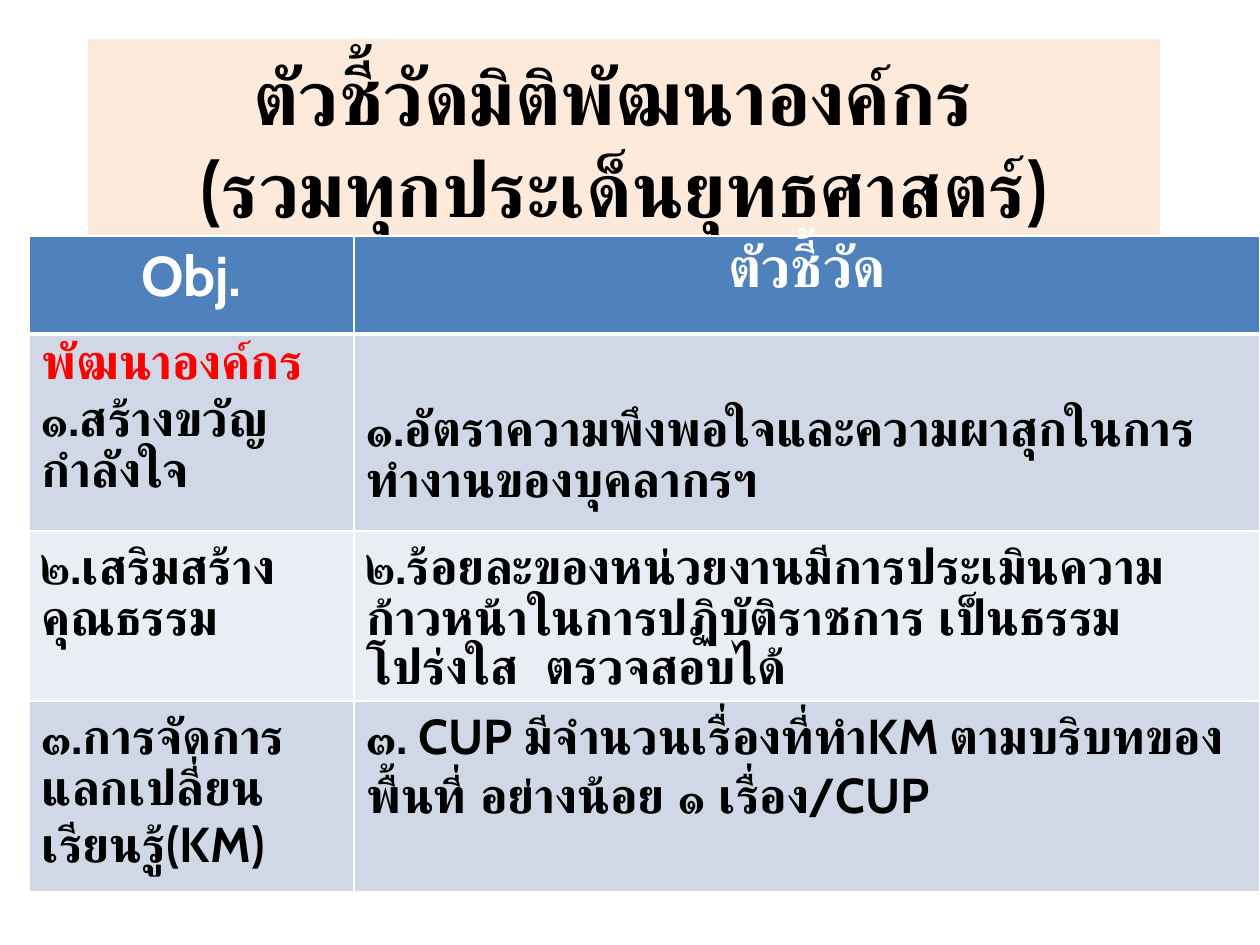
import pptx
import pptx.util
import pptx.dml.color
import pptx.enum.shapes
import pptx.enum.text
import pptx.oxml

THEME = {
    "font": "Cabin",
    "title_size": 44, "head_size": 32, "body_size": 28,
    "peach": "FDEADA", "blue": "4F81BD", "bands": ("D0D8E8", "E9EDF4"),
    "black": "000000", "white": "FFFFFF", "red": "FF0000",
}
EMU_PER_PX = 914400 / 126
CENTER = pptx.enum.text.PP_ALIGN.CENTER


def px(n):
    return pptx.util.Emu(round(n * EMU_PER_PX))


def add_run(p, text, size, color):
    r = p.add_run()
    r.text = text
    r.font.name = THEME["font"]
    r.font.size = pptx.util.Pt(THEME[size])
    r.font.bold = True
    r.font.color.rgb = pptx.dml.color.RGBColor.from_string(THEME[color])


prs = pptx.Presentation()
prs.slide_width, prs.slide_height = px(1260), px(945)
s = prs.slides.add_slide(prs.slide_layouts[6])

# Title band
sp = s.shapes.add_shape(pptx.enum.shapes.MSO_SHAPE.RECTANGLE,
                        px(88), px(39), px(1072), px(203))
sp.shadow.inherit = False
sp.fill.solid()
sp.fill.fore_color.rgb = pptx.dml.color.RGBColor.from_string(THEME["peach"])
sp.line.fill.background()
tf = sp.text_frame
tf.word_wrap = True
tf.vertical_anchor = pptx.enum.text.MSO_ANCHOR.MIDDLE
p = tf.paragraphs[0]
p.alignment = CENTER
add_run(p, "ตัวชี้วัดมิติพัฒนาองค์กร ", "title_size", "black")
p.add_line_break()
add_run(p, "(รวมทุกประเด็นยุทธศาสตร์)", "title_size", "black")

# Objectives and indicators: each cell is a list of (text, colour) paragraphs
rows = [
    ([("Obj.", "white")], [("ตัวชี้วัด", "white")]),
    ([("พัฒนาองค์กร", "red"), ("๑.สร้างขวัญกำลังใจ", "black")],
     [("๑.อัตราความพึงพอใจและความผาสุกในการทำงานของบุคลากรฯ", "black")]),
    ([("๒.เสริมสร้างคุณธรรม", "black")],
     [("๒.ร้อยละของหน่วยงานมีการประเมินความก้าวหน้าในการปฏิบัติราชการ "
       "เป็นธรรม โปร่งใส  ตรวจสอบได้", "black")]),
    ([("๓.การจัดการแลกเปลี่ยนเรียนรู้(KM)", "black")],
     [("๓. CUP มีจำนวนเรื่องที่ทำKM ตามบริบทของพื้นที่ อย่างน้อย ๑ เรื่อง/CUP",
       "black")]),
]
col_widths = [325, 906]
row_heights = [98, 197, 170, 191]
table = s.shapes.add_table(len(rows), len(col_widths), px(29), px(236),
                           px(sum(col_widths)), px(sum(row_heights))).table
for column, width in zip(table.columns, col_widths):
    column.width = px(width)

for i, (row, height) in enumerate(zip(rows, row_heights)):
    table.rows[i].height = px(height)
    header = i == 0
    fill = THEME["blue"] if header else THEME["bands"][(i - 1) % 2]
    for j, paragraphs in enumerate(row):
        cell = table.cell(i, j)
        tf = cell.text_frame
        for k, (text, color) in enumerate(paragraphs):
            p = tf.paragraphs[0] if k == 0 else tf.add_paragraph()
            if header:
                p.alignment = CENTER
            add_run(p, text, "head_size" if header else "body_size", color)
        tcPr = cell._tc.get_or_add_tcPr()
        for side in ("lnL", "lnR", "lnT", "lnB"):
            heavy = (header and side == "lnB") or (i == 1 and side == "lnT")
            width = pptx.util.Pt(3 if heavy else 1)
            tcPr.append(pptx.oxml.parse_xml(
                f'<a:{side} xmlns:a="http://schemas.openxmlformats.org/drawingml/2006/main" '
                f'w="{width}"><a:solidFill><a:srgbClr val="{THEME["white"]}"/>'
                f'</a:solidFill></a:{side}>'))
        cell.fill.solid()
        cell.fill.fore_color.rgb = pptx.dml.color.RGBColor.from_string(fill)

# The first indicator sits one line lower, level with its objective
table.cell(1, 1).margin_top = px(65)

prs.save("out.pptx")
